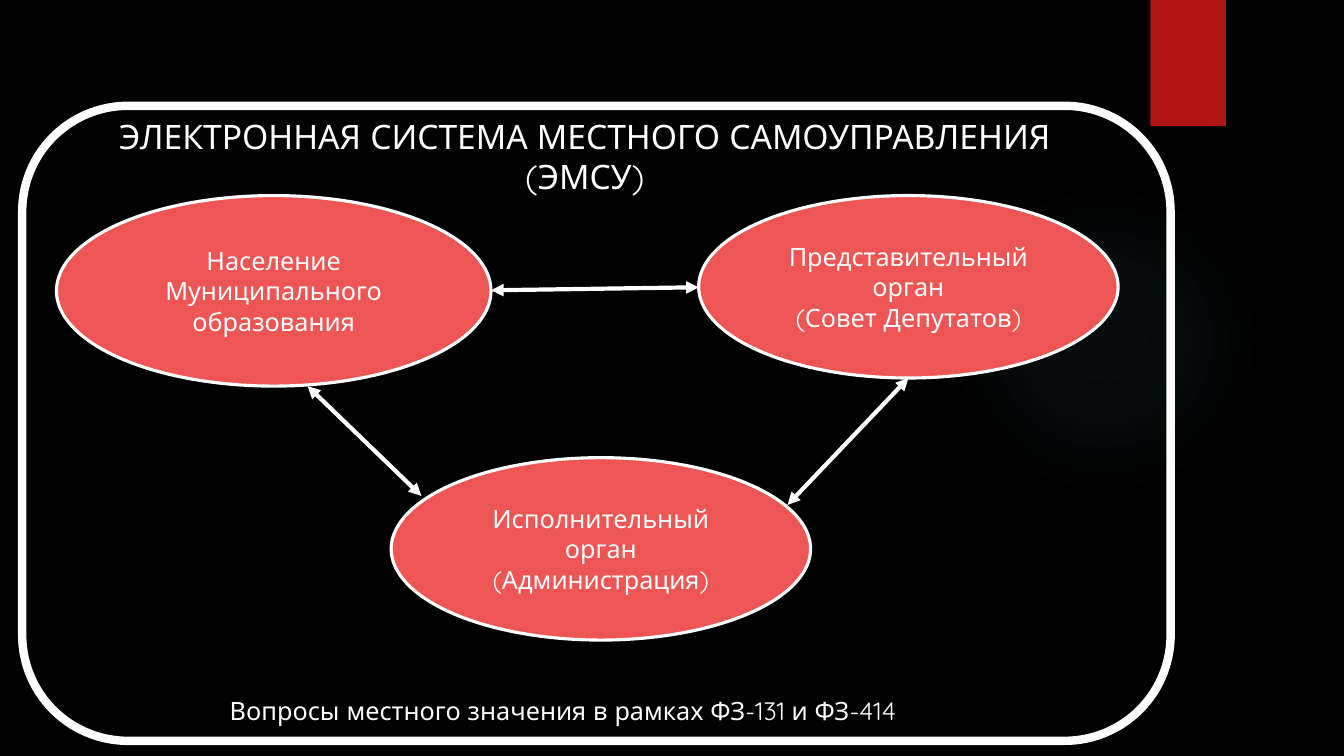
from dataclasses import dataclass

from lxml.etree import SubElement
from pptx import Presentation
from pptx.dml.color import RGBColor
from pptx.enum.shapes import MSO_CONNECTOR as Link, MSO_SHAPE as Kind
from pptx.enum.text import MSO_ANCHOR as Anchor, MSO_AUTO_SIZE as Fit, PP_ALIGN as Align
from pptx.oxml import parse_xml
from pptx.oxml.ns import nsdecls, qn
from pptx.shapes.autoshape import Shape
from pptx.slide import Slide
from pptx.text.text import TextFrame
from pptx.util import Emu, Pt

PX = 9144  # 100 px to the inch
FONT = "Quicksand"
BLACK = RGBColor(0x00, 0x00, 0x00)
WHITE = RGBColor(0xFF, 0xFF, 0xFF)
RED = RGBColor(0xB0, 0x15, 0x13)
CORAL = RGBColor(0xED, 0x56, 0x54)
TEAL = RGBColor(0x50, 0xB9, 0xC1)


@dataclass(frozen=True)
class Box:
    left: int
    top: int
    width: int
    height: int

    def emu(self) -> list[Emu]:
        return [Emu(n * PX) for n in (self.left, self.top, self.width, self.height)]


@dataclass(frozen=True)
class Body:
    box: Box
    lines: tuple[str, ...]


@dataclass(frozen=True)
class Arrow:
    start: tuple[int, int]
    end: tuple[int, int]


BODIES = (
    Body(Box(56, 194, 431, 189), ("Население Муниципального образования",)),
    Body(Box(693, 194, 416, 181), ("Представительный орган", "(Совет Депутатов)")),
    Body(Box(388, 454, 416, 181), ("Исполнительный орган", "(Администрация)")),
)
ARROWS = (
    Arrow((487, 288), (693, 285)),
    Arrow((781, 501), (901, 375)),
    Arrow((418, 492), (305, 383)),
)
TITLE = ("ЭЛЕКТРОННАЯ СИСТЕМА МЕСТНОГО САМОУПРАВЛЕНИЯ", "(ЭМСУ)")
NOTE = ("Вопросы местного значения в рамках ФЗ-131 и ФЗ-414",)


def write(frame: TextFrame, lines: tuple[str, ...], size: int,
          align: Align, anchor: Anchor) -> None:
    frame.word_wrap = True
    frame.vertical_anchor = anchor
    for i, line in enumerate(lines):
        para = frame.add_paragraph() if i else frame.paragraphs[0]
        para.alignment = align
        run = para.add_run()
        run.text = line
        run.font.name = FONT
        run.font.size = Pt(size)
        run.font.color.rgb = WHITE


def draw(slide: Slide, kind: Kind, box: Box, fill: RGBColor | None = None,
         line: float = 0) -> Shape:
    """Add a flat shape; no fill or a zero line leaves that part out."""
    shape = slide.shapes.add_shape(kind, *box.emu())
    shape.shadow.inherit = False
    if fill is None:
        shape.fill.background()
    else:
        shape.fill.solid()
        shape.fill.fore_color.rgb = fill
    if line:
        shape.line.color.rgb = WHITE
        shape.line.width = Pt(line)
    else:
        shape.line.fill.background()
    return shape


def glow(slide: Slide, box: Box) -> None:
    shape = draw(slide, Kind.OVAL, box)
    stops = "".join(
        f'<a:gs pos="{pos * 1000}"><a:srgbClr val="{TEAL}">'
        f'<a:alpha val="{alpha * 1000}"/></a:srgbClr></a:gs>'
        for pos, alpha in ((0, 7), (36, 6), (69, 0)))
    grad = parse_xml(
        f'<a:gradFill {nsdecls("a")}><a:gsLst>{stops}</a:gsLst><a:path path="circle">'
        '<a:fillToRect l="50000" t="50000" r="50000" b="50000"/></a:path></a:gradFill>')
    props = shape.element.spPr
    props.replace(props.find(qn("a:noFill")), grad)


def join(slide: Slide, arrow: Arrow) -> None:
    ends = [Emu(n * PX) for n in arrow.start + arrow.end]
    link = slide.shapes.add_connector(Link.STRAIGHT, *ends)
    link.line.color.rgb = WHITE
    link.line.width = Pt(3)
    for tag in ("a:headEnd", "a:tailEnd"):
        SubElement(link.line._get_or_add_ln(), qn(tag), type="triangle")
    SubElement(link.element.spPr, qn("a:effectLst"))


def main() -> None:
    deck = Presentation()
    deck.slide_width, deck.slide_height = Emu(1333 * PX), Emu(750 * PX)
    slide = deck.slides.add_slide(deck.slide_layouts[5])
    slide.background.fill.solid()
    slide.background.fill.fore_color.rgb = BLACK

    glow(slide, Box(941, 183, 308, 308))
    draw(slide, Kind.RECTANGLE, Box(1141, 0, 75, 125), RED)

    title = slide.shapes.title
    title.left, title.top, title.width, title.height = Box(-23, 110, 1206, 91).emu()
    write(title.text_frame, TITLE, 24, Align.CENTER, Anchor.TOP)
    title.text_frame.auto_size = Fit.NONE

    for body in BODIES:
        oval = draw(slide, Kind.OVAL, body.box, CORAL, 2.25)
        write(oval.text_frame, body.lines, 18, Align.CENTER, Anchor.MIDDLE)
    for arrow in ARROWS:
        join(slide, arrow)
    draw(slide, Kind.ROUNDED_RECTANGLE, Box(22, 105, 1139, 630), line=6)

    note = slide.shapes.add_textbox(*Box(218, 685, 724, 40).emu())
    write(note.text_frame, NOTE, 18, Align.LEFT, Anchor.TOP)
    deck.save("out.pptx")


if __name__ == "__main__":
    main()
